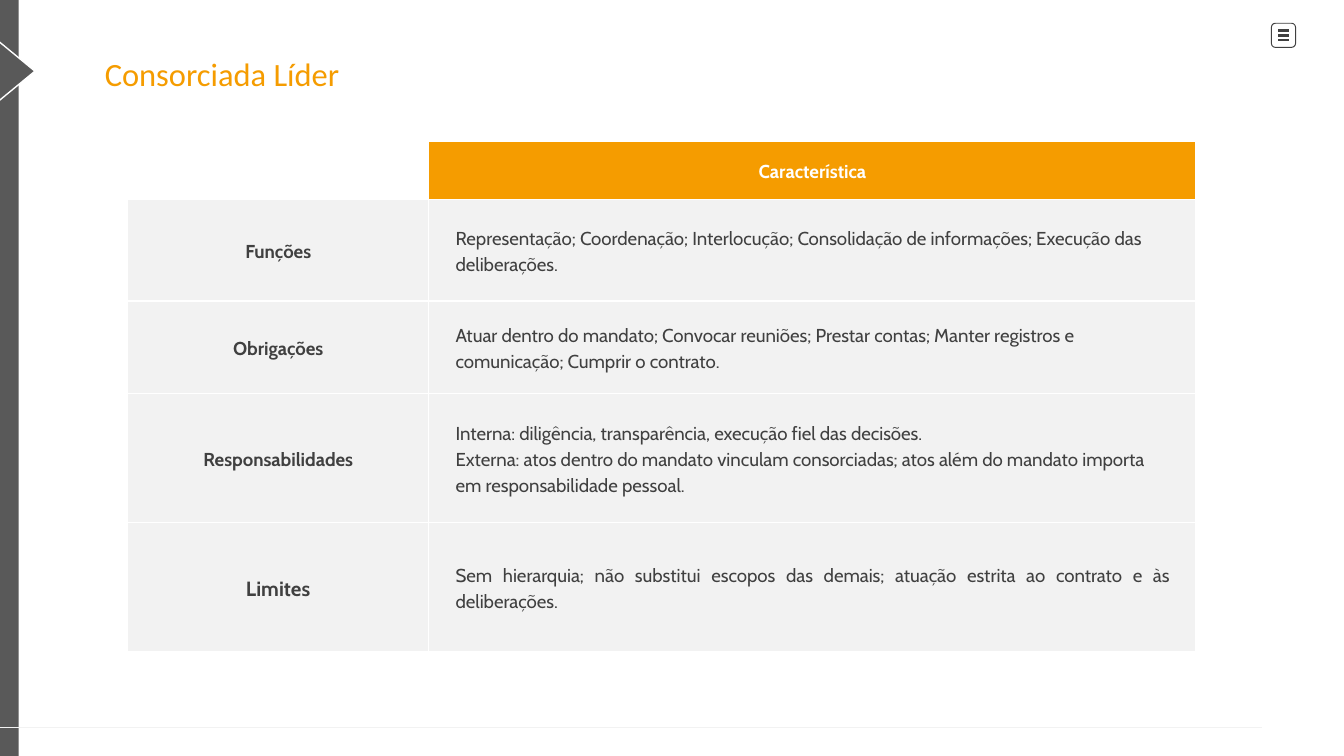
from copy import deepcopy

from lxml import etree
from pptx import Presentation
from pptx.dml.color import RGBColor
from pptx.enum.shapes import MSO_CONNECTOR, MSO_SHAPE
from pptx.enum.text import MSO_ANCHOR, PP_ALIGN
from pptx.oxml.ns import qn
from pptx.util import Inches, Pt

LEFT, CENTER, JUSTIFY = PP_ALIGN.LEFT, PP_ALIGN.CENTER, PP_ALIGN.JUSTIFY
MIDDLE = MSO_ANCHOR.MIDDLE
STRAIGHT = MSO_CONNECTOR.STRAIGHT
RECTANGLE = MSO_SHAPE.RECTANGLE
ROUNDED = MSO_SHAPE.ROUNDED_RECTANGLE
TRIANGLE = MSO_SHAPE.ISOSCELES_TRIANGLE

ORANGE, WHITE, INK = "F59C00", "FFFFFF", "404040"
GRAPHITE, PALE = "595959", "F2F2F2"
COLUMNS, ROWS = 100, 56.25

TOPICS = [
    ("Funções", "Representação; Coordenação; Interlocução; Consolidação de "
     "informações; Execução das deliberações.", 7.55, 10, LEFT),
    ("Obrigações", "Atuar dentro do mandato; Convocar reuniões; Prestar contas; "
     "Manter registros e comunicação; Cumprir o contrato.", 6.9, 10, LEFT),
    ("Responsabilidades", "Interna: diligência, transparência, execução fiel das "
     "decisões. \vExterna: atos dentro do mandato vinculam consorciadas; atos além "
     "do mandato importa em responsabilidade pessoal.", 9.6, 10, LEFT),
    ("Limites", "Sem hierarquia; não substitui escopos das demais; atuação "
     "estrita ao contrato e às deliberações.", 9.6, 11, JUSTIFY),
]


def color(hex_string):
    """Turn a hex string into a colour."""
    return RGBColor.from_string(hex_string)


def write(frame, text, size=10, font="Cabin", ink=INK, bold=False, align=LEFT,
          spacing=1.15, after=8, baseline=None):
    """Write one formatted paragraph into a text frame."""
    paragraph = frame.paragraphs[0]
    paragraph.text = text
    paragraph.alignment = align
    paragraph.line_spacing = spacing
    paragraph.space_after = Pt(after)
    for run in paragraph.runs:
        run.font.size, run.font.name, run.font.bold = Pt(size), font, bold
        run.font.color.rgb = color(ink)
        if baseline:
            run.font._element.set("baseline", str(baseline * 1000))
    for line_break in paragraph._p.findall(qn("a:br")):
        line_break.insert(0, deepcopy(paragraph.runs[0].font._element))


class Page:
    """Hold the slide, its grid and the way each element is drawn."""

    def __init__(self, presentation):
        """Add a blank slide and measure its grid."""
        self.slide = presentation.slides.add_slide(presentation.slide_layouts[6])
        self.column = presentation.slide_width / COLUMNS
        self.row = presentation.slide_height / ROWS

    def place(self, x, y, *size):
        """Convert grid columns and rows to slide lengths."""
        units = (self.column, self.row) * 2
        return [round(n * unit) for n, unit in zip((x, y, *size), units)]

    def shape(self, kind, box, fill=None, line=None, width=0.75, rotation=0):
        """Draw a preset shape."""
        shape = self.slide.shapes.add_shape(kind, *self.place(*box))
        shape.shadow.inherit = False
        shape.rotation = rotation
        if fill:
            shape.fill.solid()
            shape.fill.fore_color.rgb = color(fill)
        else:
            shape.fill.background()
        if line:
            shape.line.color.rgb = color(line)
            shape.line.width = Pt(width)
        else:
            shape.line.fill.background()

    def rule(self, start, end, y, line, width):
        """Draw a horizontal line."""
        rule = self.slide.shapes.add_connector(
            STRAIGHT, *self.place(start, y, end, y))
        rule.line.color.rgb = color(line)
        rule.line.width = Pt(width)
        etree.SubElement(rule._element.spPr, qn("a:effectLst"))

    def title(self, text, box):
        """Write the slide title."""
        frame = self.slide.shapes.add_textbox(*self.place(*box)).text_frame
        frame.word_wrap = True
        frame.margin_left = frame.margin_right = Inches(0.07)
        frame.margin_top = frame.margin_bottom = Inches(0.04)
        write(frame, text, size=30, font="Calibri", ink=ORANGE, spacing=0.9,
              after=0, baseline=30)

    def cell(self, cell, fill, text="", inset=0.07, **style):
        """Fill, border and write a table cell."""
        cell.fill.solid()
        cell.fill.fore_color.rgb = color(fill)
        cell.vertical_anchor = MIDDLE
        cell.margin_left = cell.margin_right = Inches(inset)
        cell.margin_top = cell.margin_bottom = 0
        for index, side in enumerate("LRTB"):
            border = etree.Element(qn(f"a:ln{side}"), w=str(Pt(1)))
            paint = etree.SubElement(border, qn("a:solidFill"))
            etree.SubElement(paint, qn("a:srgbClr"), val=WHITE)
            cell._tc.get_or_add_tcPr().insert(index, border)
        if text:
            write(cell.text_frame, text, **style)

    def table(self, box, widths, heading_height, heading, topics):
        """Build the table of topics."""
        table = self.slide.shapes.add_table(
            len(topics) + 1, len(widths), *self.place(*box)).table
        table.first_row = table.horz_banding = False
        for column, width in zip(table.columns, widths):
            column.width = round(width * self.column)
        heights = [heading_height] + [topic[2] for topic in topics]
        for row, height in zip(table.rows, heights):
            row.height = round(height * self.row)
        self.cell(table.cell(0, 0), WHITE)
        self.cell(table.cell(0, 1), ORANGE, heading, ink=WHITE, bold=True,
                  align=CENTER)
        for index, (name, detail, _, size, align) in enumerate(topics, 1):
            self.cell(table.cell(index, 0), PALE, name, size=size, bold=True,
                      align=CENTER)
            self.cell(table.cell(index, 1), PALE, detail, inset=0.2, align=align)


def main():
    """Build and save the slide."""
    presentation = Presentation()
    presentation.slide_width = Inches(COLUMNS / 10)
    presentation.slide_height = Inches(ROWS / 10)
    page = Page(presentation)
    page.shape(RECTANGLE, (0, 0, 1.4, ROWS), fill=GRAPHITE)
    page.rule(93.9, 0, 54.15, PALE, 0.75)
    page.shape(ROUNDED, (94.6, 1.73, 1.8, 1.8), line=INK, width=0.5)
    for bar in range(3):
        page.rule(95.9, 95.1, 2.28 + bar * 0.36, INK, 1.25)
    page.table((9.5, 10.53, 79.5, 37.95), (22.4, 57.1), 4.3, "Característica",
               TOPICS)
    page.title("Consorciada Líder", (7.1, 3.7, 49, 4.1))
    page.shape(TRIANGLE, (-1.9, 3.6, 5.6, 3.4), fill=GRAPHITE, line=WHITE,
               rotation=90)
    presentation.save("out.pptx")


if __name__ == "__main__":
    main()
